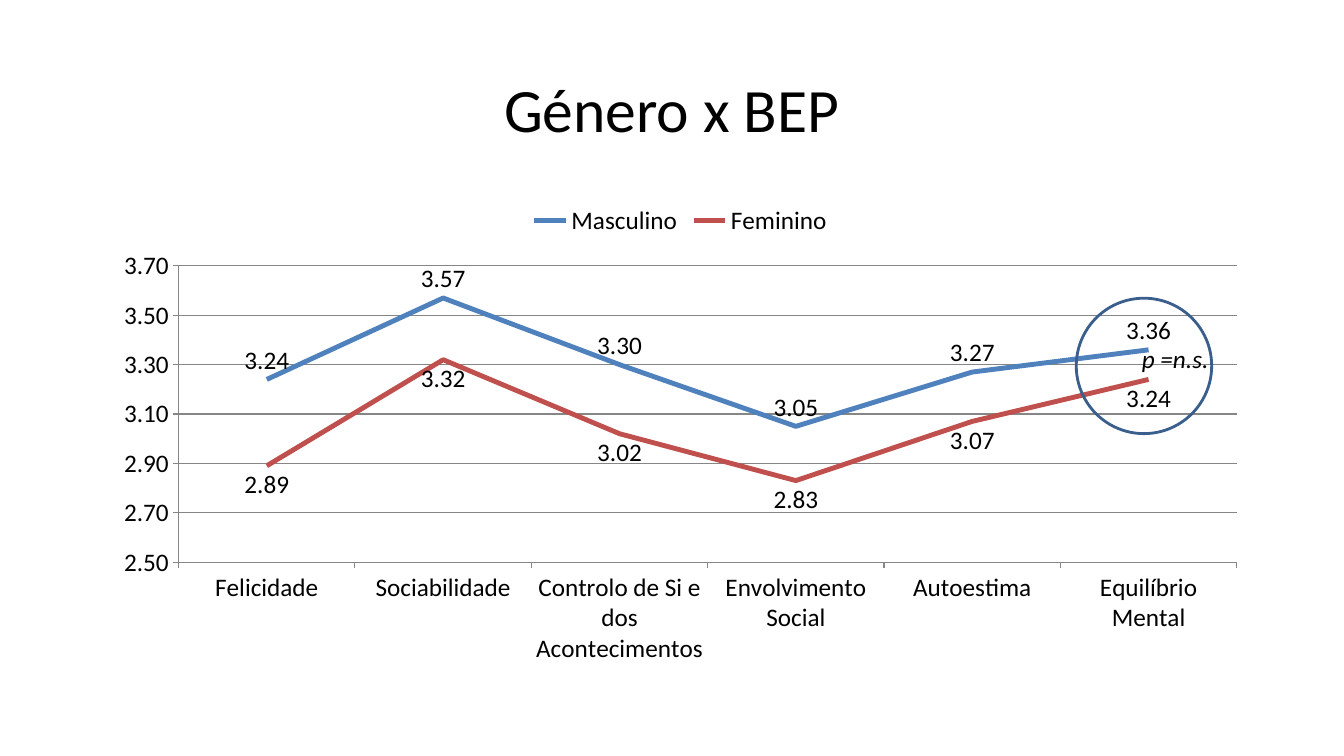
from dataclasses import dataclass

from lxml.etree import SubElement
from pptx import Presentation
from pptx.chart.data import CategoryChartData
from pptx.dml.color import RGBColor
from pptx.enum.chart import XL_CHART_TYPE, XL_LABEL_POSITION, XL_LEGEND_POSITION, XL_TICK_MARK
from pptx.enum.shapes import MSO_SHAPE
from pptx.enum.text import MSO_ANCHOR, MSO_AUTO_SIZE, PP_ALIGN
from pptx.oxml.ns import qn
from pptx.util import Pt

PIXEL = 9525


@dataclass(frozen=True)
class Theme:
    font: str = "Calibri"
    title_size: int = 44
    body_size: int = 18
    text: str = "000000"
    grid: str = "868686"
    ring: str = "3A5F8C"
    male: str = "4F81BD"
    female: str = "C0504D"


def apply_format(target, values):
    for name, value in values.items():
        setattr(target, name, value)


class SlideBuilder:
    def __init__(self, slide, theme):
        self.slide = slide
        self.theme = theme

    def box(self, *lengths):
        return [length * PIXEL for length in lengths]

    def style_font(self, font, size, **values):
        apply_format(font, {"name": self.theme.font, "size": Pt(size), **values})
        font.color.rgb = RGBColor.from_string(self.theme.text)

    def style_line(self, line, color, width):
        line.color.rgb = RGBColor.from_string(color)
        line.width = Pt(width)

    def add_title(self, text, *box):
        shape = self.slide.shapes.title
        apply_format(shape, dict(zip(("left", "top", "width", "height"), self.box(*box))))
        frame = shape.text_frame
        apply_format(frame, {"text": text, "vertical_anchor": MSO_ANCHOR.MIDDLE, "word_wrap": True})
        paragraph = frame.paragraphs[0]
        apply_format(paragraph, {"alignment": PP_ALIGN.CENTER, "line_spacing": 0.9})
        self.style_font(paragraph.runs[0].font, self.theme.title_size)

    def add_line_chart(self, categories, series_rows, *box):
        data = CategoryChartData(number_format="0.00")
        data.categories = categories
        for name, values, color, position in series_rows:
            data.add_series(name, values)
        frame = self.slide.shapes.add_chart(XL_CHART_TYPE.LINE, *self.box(*box), data)
        chart = frame.chart
        apply_format(chart, {"has_title": False, "has_legend": True})
        apply_format(chart.legend, {"position": XL_LEGEND_POSITION.TOP, "include_in_layout": False})
        self.style_font(chart.font, self.theme.body_size)
        plot = chart.plots[0]
        plot.vary_by_categories = False
        for series, (name, values, color, position) in zip(plot.series, series_rows):
            series.smooth = False
            self.style_line(series.format.line, color, 3.5)
            labels = series.data_labels
            apply_format(labels, {
                "show_value": True, "position": position,
                "number_format": "0.00", "number_format_is_linked": False,
            })
            self.style_font(labels.font, self.theme.body_size)
        self.style_axes(chart)

    def style_axes(self, chart):
        apply_format(chart.value_axis, {
            "minimum_scale": 2.5, "maximum_scale": 3.7, "major_unit": 0.2,
            "has_major_gridlines": True,
        })
        apply_format(chart.value_axis.tick_labels, {
            "number_format": "0.00", "number_format_is_linked": False,
        })
        self.style_line(chart.value_axis.major_gridlines.format.line, self.theme.grid, 0.75)
        for axis in (chart.category_axis, chart.value_axis):
            apply_format(axis, {
                "major_tick_mark": XL_TICK_MARK.OUTSIDE, "minor_tick_mark": XL_TICK_MARK.NONE,
            })
            self.style_line(axis.format.line, self.theme.grid, 0.75)
            self.style_font(axis.tick_labels.font, self.theme.body_size)

    def add_ring(self, *box):
        shape = self.slide.shapes.add_shape(MSO_SHAPE.OVAL, *self.box(*box))
        shape.shadow.inherit = False
        shape.fill.background()
        self.style_line(shape.line, self.theme.ring, 2)

    def add_note(self, text, *box):
        shape = self.slide.shapes.add_textbox(*self.box(*box))
        frame = shape.text_frame
        apply_format(frame, {
            "text": text, "word_wrap": False, "auto_size": MSO_AUTO_SIZE.SHAPE_TO_FIT_TEXT,
        })
        self.style_font(frame.paragraphs[0].runs[0].font, self.theme.body_size, italic=True)


def main():
    presentation = Presentation()
    apply_format(presentation, {"slide_width": 1280 * PIXEL, "slide_height": 720 * PIXEL})
    theme = Theme()
    builder = SlideBuilder(presentation.slides.add_slide(presentation.slide_layouts[5]), theme)
    builder.add_title("Género x BEP", 88, 38, 1104, 139)
    categories = [
        "Felicidade", "Sociabilidade", "Controlo de Si e dos Acontecimentos",
        "Envolvimento Social", "Autoestima", "Equilíbrio Mental",
    ]
    series_rows = [
        ("Masculino", (3.24, 3.57, 3.30, 3.05, 3.27, 3.36), theme.male, XL_LABEL_POSITION.ABOVE),
        ("Feminino", (2.89, 3.32, 3.02, 2.83, 3.07, 3.24), theme.female, XL_LABEL_POSITION.BELOW),
    ]
    builder.add_line_chart(categories, series_rows, 96, 184, 1104, 457)
    builder.add_ring(1025, 284, 129, 129)
    builder.add_note("p =n.s.", 1078, 322, 90, 38)
    presentation.save("out.pptx")


if __name__ == "__main__":
    main()
